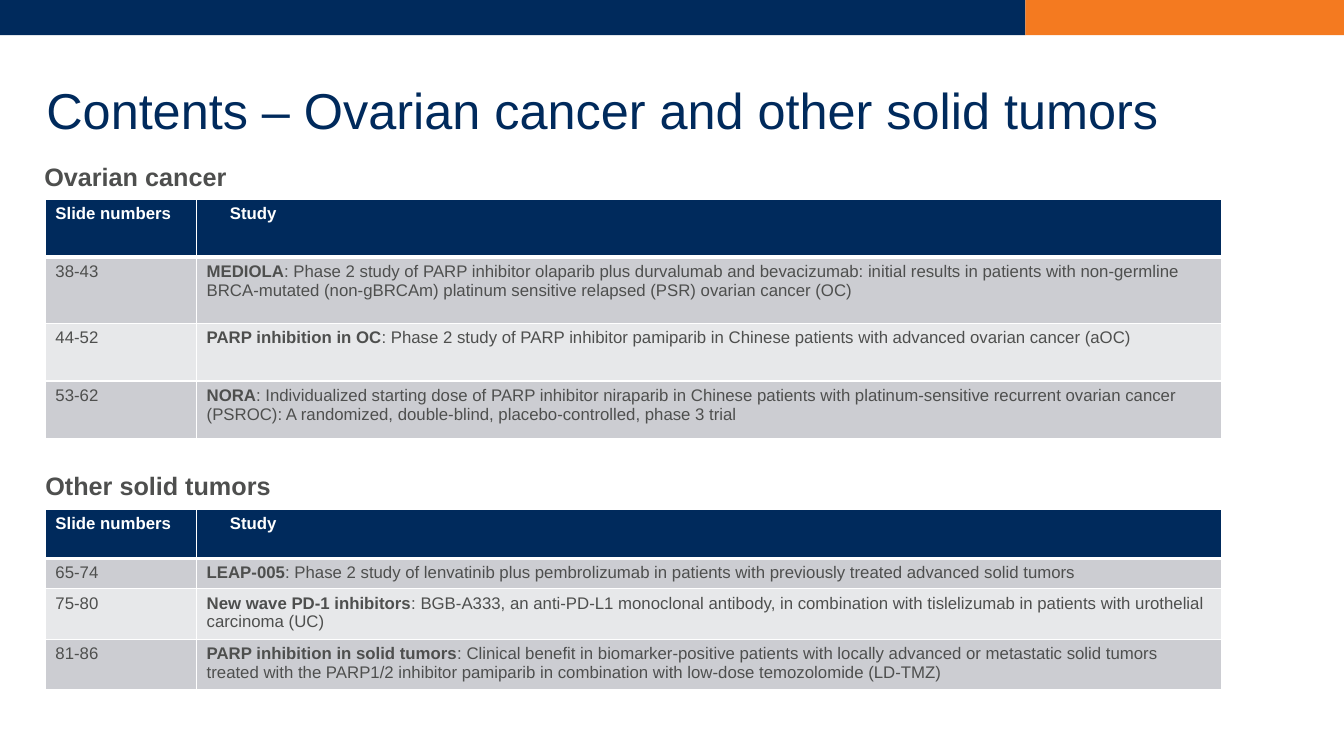
from dataclasses import dataclass

from lxml.etree import SubElement
from pptx import Presentation
from pptx.dml.color import RGBColor
from pptx.enum.shapes import MSO_SHAPE
from pptx.enum.text import MSO_ANCHOR
from pptx.oxml.ns import qn
from pptx.util import Inches, Pt


@dataclass(frozen=True)
class Theme:
    navy: str = "002A5C"
    orange: str = "F47A20"
    text: str = "4E4F4E"
    white: str = "FFFFFF"
    bands: tuple = ("CCCDD2", "E7E8EA")
    font: str = "Arial"
    title_size: int = 36
    heading_size: int = 18
    table_size: int = 12


THEME = Theme()

TABLE_LEFT = 0.45
COLUMN_WIDTHS = (1.5, 10.17)
STUDY_HEADER_INSET = 0.33

OVARIAN_STUDIES = [
    ("38-43", "MEDIOLA",
     ": Phase 2 study of PARP inhibitor olaparib plus durvalumab and bevacizumab: "
     "initial results in patients with non-germline BRCA-mutated (non-gBRCAm) "
     "platinum sensitive relapsed (PSR) ovarian cancer (OC)"),
    ("44-52", "PARP inhibition in OC",
     ": Phase 2 study of PARP inhibitor pamiparib in Chinese patients with "
     "advanced ovarian cancer (aOC)"),
    ("53-62", "NORA",
     ": Individualized starting dose of PARP inhibitor niraparib in Chinese "
     "patients with platinum-sensitive recurrent ovarian cancer (PSROC): "
     "A randomized, double-blind, placebo-controlled, phase 3 trial"),
]

OTHER_STUDIES = [
    ("65-74", "LEAP-005",
     ": Phase 2 study of lenvatinib plus pembrolizumab in patients with "
     "previously treated advanced solid tumors"),
    ("75-80", "New wave PD-1 inhibitors",
     ": BGB-A333, an anti-PD-L1 monoclonal antibody, in combination with "
     "tislelizumab in patients with urothelial carcinoma (UC)"),
    ("81-86", "PARP inhibition in solid tumors",
     ": Clinical benefit in biomarker-positive patients with locally advanced "
     "or metastatic solid tumors treated with the PARP1/2 inhibitor pamiparib "
     "in combination with low-dose temozolomide (LD-TMZ)"),
]


def rgb(color):
    return RGBColor.from_string(color)


def style_paragraph(paragraph, size, color, bold=None):
    font = paragraph.font
    font.name, font.size, font.bold = THEME.font, Pt(size), bold
    font.color.rgb = rgb(color)


def add_bar(slide, left, width, color):
    bar = slide.shapes.add_shape(
        MSO_SHAPE.RECTANGLE, Inches(left), 0, Inches(width), Inches(0.35))
    bar.shadow.inherit = False
    bar.fill.solid()
    bar.fill.fore_color.rgb = rgb(color)
    bar.line.fill.background()


def add_label(slide, text, box, size, color, bold=False):
    frame = slide.shapes.add_textbox(*map(Inches, box)).text_frame
    frame.word_wrap = True
    frame.vertical_anchor = MSO_ANCHOR.MIDDLE
    frame.margin_left = frame.margin_right = 0
    frame.margin_top = frame.margin_bottom = 0
    paragraph = frame.paragraphs[0]
    paragraph.text = text
    style_paragraph(paragraph, size, color, bold)
    return paragraph


def set_cell_borders(cell, top, bottom):
    properties = cell._tc.get_or_add_tcPr()
    edges = {"a:lnL": 1, "a:lnR": 1, "a:lnT": top, "a:lnB": bottom}
    for position, (tag, points) in enumerate(edges.items()):
        line = SubElement(properties, qn(tag), w=str(Pt(points)))
        fill = SubElement(line, qn("a:solidFill"))
        SubElement(fill, qn("a:srgbClr"), val=THEME.white)
        properties.remove(line)
        properties.insert(position, line)  # borders precede the cell fill


def fill_cell(cell, color):
    cell.fill.solid()
    cell.fill.fore_color.rgb = rgb(color)


def add_study_table(slide, top, row_heights, studies):
    table = slide.shapes.add_table(
        len(row_heights), len(COLUMN_WIDTHS), Inches(TABLE_LEFT), Inches(top),
        Inches(sum(COLUMN_WIDTHS)), Inches(sum(row_heights))).table
    for column, width in zip(table.columns, COLUMN_WIDTHS):
        column.width = Inches(width)
    for row, height in zip(table.rows, row_heights):
        row.height = Inches(height)

    # Header row
    for column, heading in enumerate(("Slide numbers", "Study")):
        cell = table.cell(0, column)
        cell.text = heading
        style_paragraph(cell.text_frame.paragraphs[0], THEME.table_size,
                        THEME.white, True)
        fill_cell(cell, THEME.navy)
        set_cell_borders(cell, 1, 3)
    table.cell(0, 1).margin_left = Inches(STUDY_HEADER_INSET)

    # Study rows
    for row, (numbers, name, description) in enumerate(studies, start=1):
        numbers_cell, study_cell = table.cell(row, 0), table.cell(row, 1)
        numbers_cell.text = numbers
        study = study_cell.text_frame.paragraphs[0]
        for text, bold in ((name, True), (description, False)):
            run = study.add_run()
            run.text = text
            run.font.bold = bold
        for cell in (numbers_cell, study_cell):
            style_paragraph(cell.text_frame.paragraphs[0], THEME.table_size,
                            THEME.text)
            fill_cell(cell, THEME.bands[(row - 1) % 2])
            set_cell_borders(cell, 3 if row == 1 else 1, 1)


def main():
    deck = Presentation()
    deck.slide_width, deck.slide_height = Inches(13.33), Inches(7.5)
    slide = deck.slides.add_slide(deck.slide_layouts[6])

    # Top band and title
    add_bar(slide, 0, 10.17, THEME.navy)
    add_bar(slide, 10.17, 3.16, THEME.orange)
    title = add_label(slide, "Contents – Ovarian cancer and other solid tumors",
                      (0.46, 0.4, 12.43, 1.45), THEME.title_size, THEME.navy)
    title.line_spacing = 0.9

    # Ovarian cancer
    add_label(slide, "Ovarian cancer", (0.44, 1.52, 2.06, 0.46),
              THEME.heading_size, THEME.text, True)
    add_study_table(slide, 1.98, (0.57, 0.66, 0.57, 0.57), OVARIAN_STUDIES)

    # Other solid tumors
    add_label(slide, "Other solid tumors", (0.45, 4.59, 11.68, 0.46),
              THEME.heading_size, THEME.text, True)
    add_study_table(slide, 5.05, (0.49, 0.29, 0.48, 0.49), OTHER_STUDIES)

    deck.save("out.pptx")


if __name__ == "__main__":
    main()
